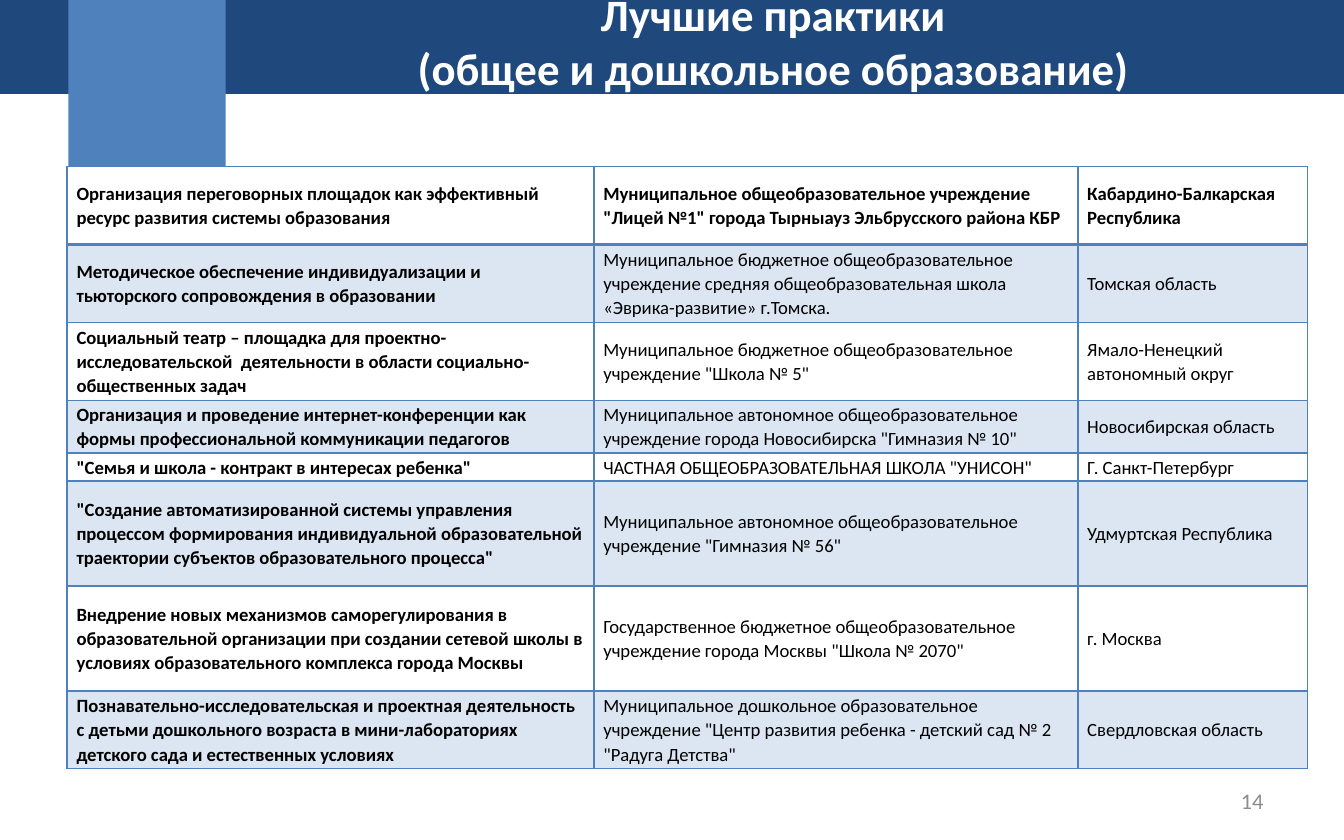
from dataclasses import dataclass

from lxml.etree import SubElement
from pptx import Presentation
from pptx.dml.color import RGBColor
from pptx.enum.shapes import MSO_SHAPE as Shape
from pptx.enum.text import MSO_ANCHOR as Anchor, MSO_AUTO_SIZE as AutoSize, PP_ALIGN as Align
from pptx.oxml.ns import qn
from pptx.util import Inches, Pt


@dataclass(frozen=True)
class Theme:
    font: str = "Calibri"
    navy: str = "1F497D"
    blue: str = "4F81BD"
    band: str = "DCE6F2"
    white: str = "FFFFFF"
    black: str = "000000"
    gray: str = "8C8C8C"
    title_size: int = 24
    number_size: int = 12
    cell_size: int = 10


theme = Theme()


def add_text(paragraph, text, size, color, bold=False):
    run = paragraph.add_run()
    run.text = text
    run.font.name = theme.font
    run.font.size = Pt(size)
    run.font.bold = bold
    run.font.color.rgb = RGBColor.from_string(color)


def add_border(cell, side, points):
    line = SubElement(cell._tc.get_or_add_tcPr(), qn(f"a:ln{side}"), w=str(Pt(points)))
    fill = SubElement(line, qn("a:solidFill"))
    SubElement(fill, qn("a:srgbClr"), val=theme.blue)


prs = Presentation()
prs.slide_width, prs.slide_height = Inches(10), Inches(6.25)
slide = prs.slides.add_slide(prs.slide_layouts[5])

for left, width, height, color in [(0, 10, 0.7, theme.navy), (0.51, 1.17, 1.24, theme.blue)]:
    banner = slide.shapes.add_shape(
        Shape.RECTANGLE, Inches(left), Inches(0), Inches(width), Inches(height))
    banner.shadow.inherit = False
    banner.fill.solid()
    banner.fill.fore_color.rgb = RGBColor.from_string(color)
    banner.line.fill.background()

page_number = slide.shapes.add_textbox(Inches(7.17), Inches(5.79), Inches(2.33), Inches(0.33))
page_number.text_frame.word_wrap = True
page_number.text_frame.vertical_anchor = Anchor.MIDDLE
number_line = page_number.text_frame.paragraphs[0]
number_line.alignment = Align.RIGHT
add_text(number_line, "14", theme.number_size, theme.gray)

heading = slide.shapes.title
slide.shapes._spTree.append(heading._element)
heading.left, heading.top = Inches(1.3), Inches(-0.15)
heading.width, heading.height = Inches(8.98), Inches(0.91)
heading_frame = heading.text_frame
heading_frame.word_wrap = True
heading_frame.auto_size = AutoSize.SHAPE_TO_FIT_TEXT
heading_frame.vertical_anchor = Anchor.TOP
heading_lines = [heading_frame.paragraphs[0], heading_frame.add_paragraph()]
for line, text in zip(heading_lines, ["Лучшие практики ", "(общее и дошкольное образование) "]):
    line.alignment = Align.CENTER
    add_text(line, text, theme.title_size, theme.white, bold=True)

practices = [
    (0.58, "Организация переговорных площадок как эффективный ресурс развития системы образования",
     'Муниципальное общеобразовательное учреждение "Лицей №1" города Тырныауз Эльбрусского района КБР',
     "Кабардино-Балкарская Республика"),
    (0.58, "Методическое обеспечение индивидуализации и тьюторского сопровождения в образовании",
     "Муниципальное бюджетное общеобразовательное учреждение средняя общеобразовательная школа "
     "«Эврика-развитие» г.Томска.",
     "Томская область"),
    (0.58, "Социальный театр – площадка для проектно-исследовательской  деятельности "
     "в области социально-общественных задач",
     'Муниципальное бюджетное общеобразовательное учреждение "Школа № 5"',
     "Ямало-Ненецкий автономный округ"),
    (0.39, "Организация и проведение интернет-конференции как формы профессиональной "
     "коммуникации педагогов",
     'Муниципальное автономное общеобразовательное учреждение города Новосибирска "Гимназия № 10"',
     "Новосибирская область"),
    (0.21, '"Семья и школа - контракт в интересах ребенка"',
     'ЧАСТНАЯ ОБЩЕОБРАЗОВАТЕЛЬНАЯ ШКОЛА "УНИСОН"',
     "Г. Санкт-Петербург"),
    (0.78, '"Создание автоматизированной системы управления процессом формирования индивидуальной '
     'образовательной траектории субъектов образовательного процесса"',
     'Муниципальное автономное общеобразовательное учреждение "Гимназия № 56"',
     "Удмуртская Республика"),
    (0.78, "Внедрение новых механизмов саморегулирования в образовательной организации при создании "
     "сетевой школы в условиях образовательного комплекса города Москвы",
     'Государственное бюджетное общеобразовательное учреждение города Москвы "Школа № 2070"',
     "г. Москва"),
    (0.58, "Познавательно-исследовательская и проектная деятельность с детьми дошкольного возраста "
     "в мини-лабораториях детского сада и естественных условиях",
     'Муниципальное дошкольное образовательное учреждение "Центр развития ребенка - '
     'детский сад № 2 "Радуга Детства"',
     "Свердловская область"),
]
column_widths = [3.92, 3.6, 1.71]

practice_table = slide.shapes.add_table(
    len(practices), len(column_widths), Inches(0.5), Inches(1.24),
    Inches(sum(column_widths)), Inches(sum(row[0] for row in practices))).table
practice_table.horz_banding = False
for column, width in zip(practice_table.columns, column_widths):
    column.width = Inches(width)

for row_index, (height, *texts) in enumerate(practices):
    practice_table.rows[row_index].height = Inches(height)
    for column_index, text in enumerate(texts):
        cell = practice_table.cell(row_index, column_index)
        cell.vertical_anchor = Anchor.MIDDLE
        cell.margin_left = cell.margin_right = Inches(0.07)
        cell.margin_top = cell.margin_bottom = Inches(0)
        for side in "LRTB":
            under_header = (row_index, side) in [(0, "B"), (1, "T")]
            add_border(cell, side, 2 if under_header else 1)
        if row_index % 2:
            cell.fill.solid()
            cell.fill.fore_color.rgb = RGBColor.from_string(theme.band)
        else:
            cell.fill.background()
        paragraph = cell.text_frame.paragraphs[0]
        paragraph.line_spacing = 1.07
        add_text(paragraph, text, theme.cell_size, theme.black,
                 bold=row_index == 0 or column_index == 0)

prs.save("out.pptx")
